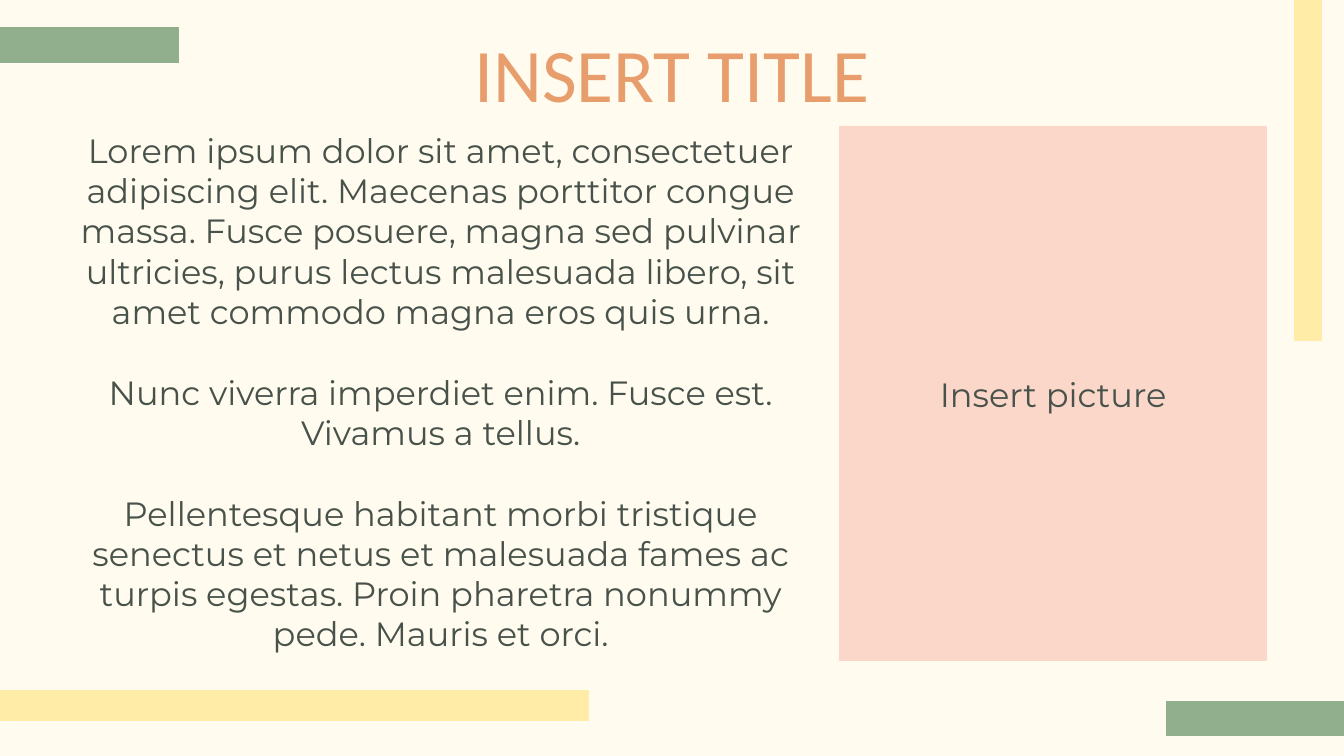
from pptx import Presentation
from pptx.dml.color import RGBColor
from pptx.enum.shapes import MSO_SHAPE
from pptx.enum.text import MSO_ANCHOR, PP_ALIGN
from pptx.util import Inches, Pt

RECT = MSO_SHAPE.RECTANGLE
MIDDLE = MSO_ANCHOR.MIDDLE
CENTER = PP_ALIGN.CENTER

CREAM, PINK, YELLOW, GREEN = "FFFCEF", "FBD7C9", "FFECA7", "91AF8D"
ORANGE, DARK = "E89D6D", "48524B"


def paint(color, tone):
    color.rgb = RGBColor.from_string(tone)


def write(shape, texts, font, size, tone, gap=0):
    frame = shape.text_frame
    frame.word_wrap = True
    frame.vertical_anchor = MIDDLE
    for i, text in enumerate(texts):
        para = frame.add_paragraph() if i else frame.paragraphs[0]
        para.alignment = CENTER
        para.space_before = Pt(gap if i else 0)
        run = para.add_run()
        run.text = text
        run.font.name = font
        run.font.size = Pt(size)
        paint(run.font.color, tone)


prs = Presentation()
prs.slide_width = Inches(13.33)
prs.slide_height = Inches(7.5)
slide = prs.slides.add_slide(prs.slide_layouts[6])
back = slide.background.fill
back.solid()
paint(back.fore_color, CREAM)

blocks = [
    (8.33, 1.26, 4.23, 5.29, PINK, "Insert picture"),
    (12.84, -0.02, 0.27, 3.4, YELLOW, ""),
    (0.01, 6.85, 5.83, 0.3, YELLOW, ""),
    (0, 0.28, 1.77, 0.34, GREEN, ""),
    (11.57, 6.96, 1.77, 0.34, GREEN, ""),
]
for *place, tone, label in blocks:
    block = slide.shapes.add_shape(RECT, *map(Inches, place))
    block.shadow.inherit = False
    block.fill.solid()
    paint(block.fill.fore_color, tone)
    paint(block.line.color, tone)
    block.line.width = Pt(1)
    if label:
        write(block, [label], "Montserrat", 24, DARK)

title = slide.shapes.add_textbox(
    Inches(0), Inches(0.28), Inches(13.33), Inches(0.88))
write(title, ["INSERT TITLE"], "Calibri", 54, ORANGE)

body = slide.shapes.add_textbox(
    Inches(0.53), Inches(1.49), Inches(7.68), Inches(5.19))
body.text_frame.margin_bottom = Inches(0.45)
write(body, [
    "Lorem ipsum dolor sit amet, consectetuer adipiscing elit. "
    "Maecenas porttitor congue massa. Fusce posuere, magna sed pulvinar "
    "ultricies, purus lectus malesuada libero, sit amet commodo magna "
    "eros quis urna.",
    "Nunc viverra imperdiet enim. Fusce est. Vivamus a tellus.",
    "Pellentesque habitant morbi tristique senectus et netus et malesuada "
    "fames ac turpis egestas. Proin pharetra nonummy pede. "
    "Mauris et orci.",
], "Montserrat", 24, DARK, 28.8)

prs.save("out.pptx")
